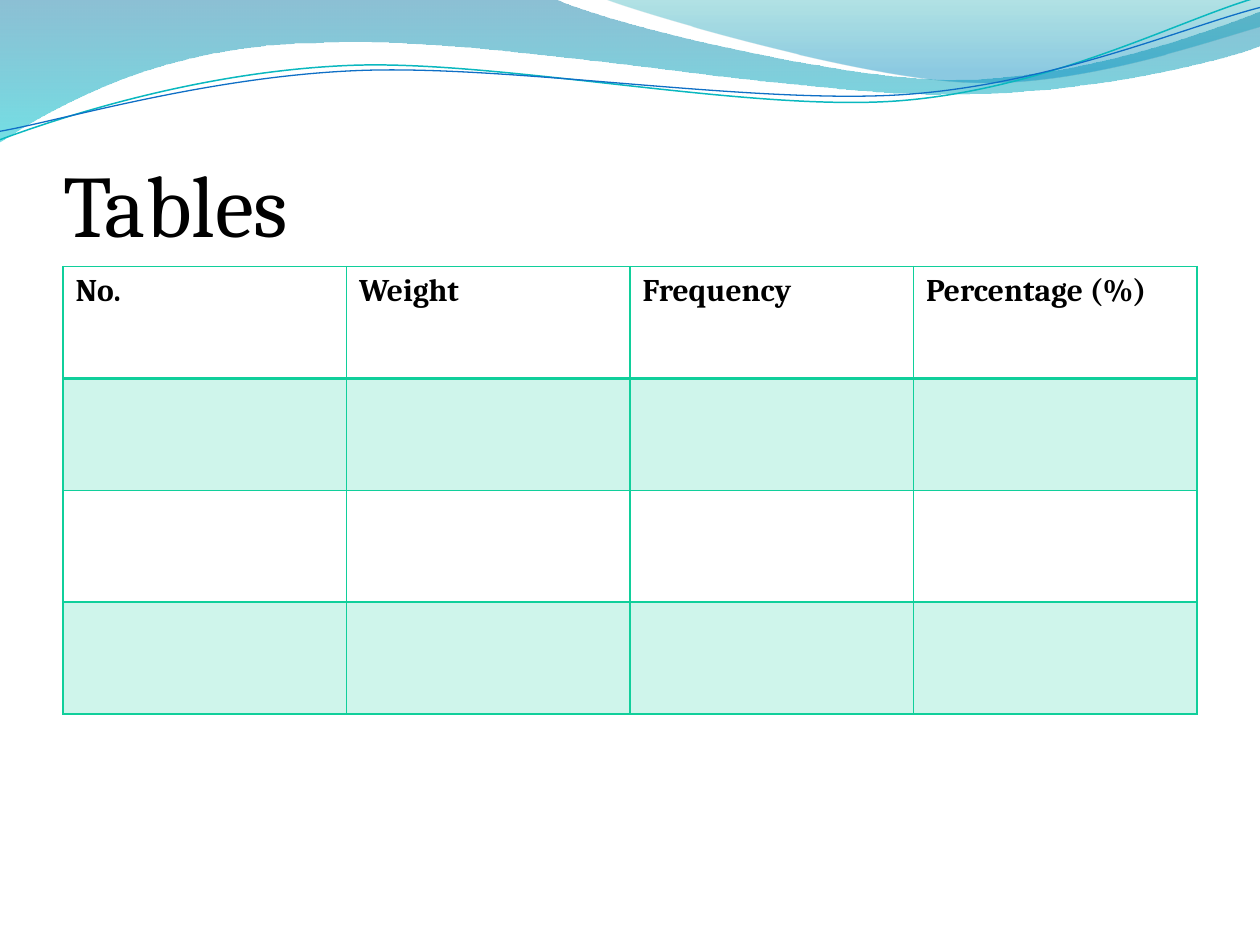
from dataclasses import dataclass

from lxml import etree
from pptx import Presentation
from pptx.dml.color import RGBColor
from pptx.enum.text import MSO_ANCHOR, MSO_AUTO_SIZE, PP_ALIGN
from pptx.oxml.ns import qn
from pptx.util import Pt


@dataclass(frozen=True)
class Theme:
    font: str = "Cambria"
    text: str = "000000"
    grid: str = "10CF9B"
    teal_line: str = "0AB8BF"
    blue_line: str = "0F6FC6"
    band_opacity: int = 20
    title_size: int = 50
    header_size: int = 18
    # Gradient stops: position, colour, opacity in percent
    wide_wave: tuple = ((0, "0074A1", 45), (100, "00C6CF", 55))
    corner_wave: tuple = ((0, "00A1A9", 30), (80, "008BBF", 45))


THEME = Theme()
HEADERS = ("No.", "Weight", "Frequency", "Percentage (%)")
ROWS = 4
CURVE_TILT = -2.7

# Outlines in points: a pair is a corner, six numbers are a Bezier curve
WIDE_WAVE = [
    (0, -0.7), (316.8, -0.7),
    (342.7, 12.2, 478.1, 45.4, 545.8, 45.4),
    (614.2, 45.4, 689.8, 18.7, 720, 6.5),
    (720.7, 25.9),
    (707.8, 31.7, 626.4, 54.7, 537.1, 54),
    (447.8, 54, 275, 20.2, 185, 24.5),
    (92.9, 25.2, 33.1, 59.8, -0.7, 81.4),
]
CORNER_WAVE = [
    (344.9, -0.7),
    (366.5, 7.9, 491, 44.6, 553.7, 46.8),
    (616.3, 49.7, 691.9, 23, 720, 15.1),
    (720, 0),
]
TEAL_CURVE = [
    (-1.4, 62.9),
    (33.8, 51.7, 114.1, 29.4, 199.8, 29.9),
    (284.9, 30.3, 425.8, 67.3, 512.4, 64.9),
    (599, 62.4, 676.4, 25.7, 720.2, 15.5),
]
BLUE_CURVE = [
    (-1.1, 58),
    (32.9, 53.8, 118.3, 32.5, 204.1, 33),
    (290.6, 33.4, 428.9, 63.1, 515.5, 61.4),
    (601.3, 59.6, 678.4, 30.1, 721.4, 21.3),
]


def color(code):
    return RGBColor.from_string(code)


def add_alpha(clr, percent):
    etree.SubElement(clr, qn("a:alpha")).set("val", str(percent * 1000))


def bend_segments(shape, outline):
    """Merge each three line segments that stand for a curve into one Bezier."""
    lines = iter(list(shape._element.iter(qn("a:lnTo"))))
    for step in outline[1:]:
        segment = next(lines)
        if len(step) == 6:
            segment.tag = qn("a:cubicBezTo")
            for _ in range(2):
                extra = next(lines)
                segment.append(extra[0])
                extra.getparent().remove(extra)


def add_outline(page, outline, close):
    points = [
        (Pt(x), Pt(y))
        for step in outline
        for x, y in zip(step[::2], step[1::2])
    ]
    builder = page.shapes.build_freeform(*points[0])
    builder.add_line_segments(points[1:], close=close)
    shape = builder.convert_to_shape()
    bend_segments(shape, outline)
    shape.shadow.inherit = False
    return shape


def add_wave(page, outline, stops):
    shape = add_outline(page, outline, True)
    shape.line.fill.background()
    shape.fill.gradient()
    shape.fill.gradient_angle = 270
    for stop, (position, code, _) in zip(shape.fill.gradient_stops, stops):
        stop.position = position / 100
        stop.color.rgb = color(code)
    colors = shape._element.spPr.iter(qn("a:srgbClr"))
    for clr, (_, _, opacity) in zip(list(colors), stops):
        add_alpha(clr, opacity)


def add_curve(page, outline, code, width):
    shape = add_outline(page, outline, False)
    shape.rotation = CURVE_TILT
    shape.fill.background()
    shape.line.color.rgb = color(code)
    shape.line.width = Pt(width)


def format_text(text_frame, size, bold=False):
    for para in text_frame.paragraphs:
        para.alignment = PP_ALIGN.LEFT
        for span in para.runs:
            span.font.name = THEME.font
            span.font.size = Pt(size)
            span.font.bold = bold
            span.font.color.rgb = color(THEME.text)


def set_title(page, text):
    title = page.shapes.title
    title.left, title.top = Pt(36), Pt(55.5)
    title.width, title.height = Pt(648), Pt(90)
    frame = title.text_frame
    frame.text = text
    frame.auto_size = MSO_AUTO_SIZE.NONE
    frame.vertical_anchor = MSO_ANCHOR.BOTTOM
    frame.margin_left = frame.margin_right = frame.margin_bottom = 0
    frame.margin_top = Pt(3.6)
    format_text(frame, THEME.title_size)


def set_borders(cell, top, bottom):
    properties = cell._tc.get_or_add_tcPr()
    for side, width in (("L", 1), ("R", 1), ("T", top), ("B", bottom)):
        line = etree.SubElement(properties, qn(f"a:ln{side}"), w=str(Pt(width)))
        fill = etree.SubElement(line, qn("a:solidFill"))
        etree.SubElement(fill, qn("a:srgbClr"), val=THEME.grid)


def fill_cell(cell, banded):
    if not banded:
        cell.fill.background()
        return
    cell.fill.solid()
    cell.fill.fore_color.rgb = color(THEME.grid)
    add_alpha(cell._tc.tcPr.find(qn("a:solidFill"))[0], THEME.band_opacity)


def add_frequency_table(page):
    frame = page.shapes.add_table(
        ROWS, len(HEADERS), Pt(36), Pt(152.4), Pt(648), Pt(255.6)
    )
    table = frame.table
    table.first_row = table.horz_banding = False
    for row_number, row in enumerate(table.rows):
        for cell in row.cells:
            set_borders(
                cell,
                top=2 if row_number == 1 else 1,
                bottom=2 if row_number == 0 else 1,
            )
            fill_cell(cell, banded=row_number % 2 == 1)
    for cell, header in zip(table.rows[0].cells, HEADERS):
        cell.text = header
        format_text(cell.text_frame, THEME.header_size, bold=True)


def main():
    deck = Presentation()
    deck.slide_width, deck.slide_height = Pt(720), Pt(540)
    page = deck.slides.add_slide(deck.slide_layouts.get_by_name("Title Only"))
    add_wave(page, WIDE_WAVE, THEME.wide_wave)
    add_wave(page, CORNER_WAVE, THEME.corner_wave)
    add_curve(page, TEAL_CURVE, THEME.teal_line, 0.85)
    add_curve(page, BLUE_CURVE, THEME.blue_line, 0.75)
    set_title(page, "Tables")
    add_frequency_table(page)
    deck.save("out.pptx")


if __name__ == "__main__":
    main()
